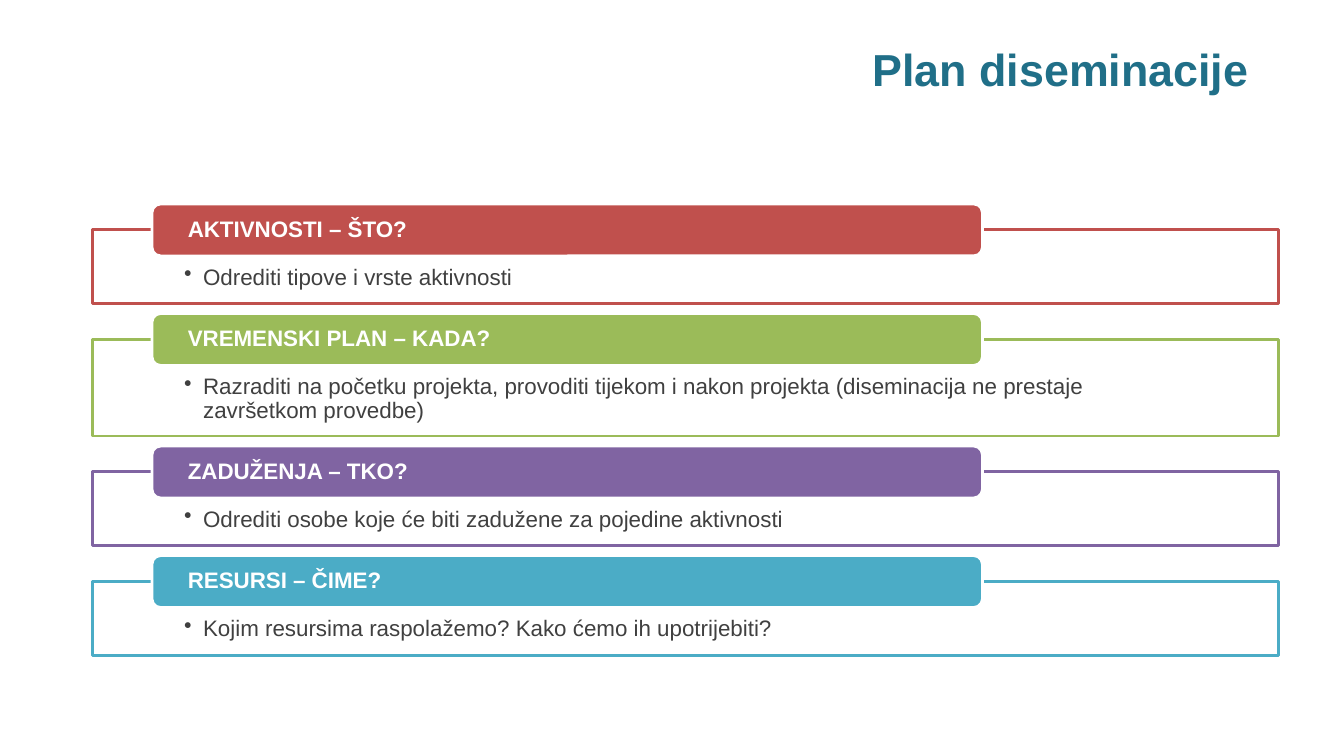
"""Build the dissemination plan slide: a title and four framed sections."""
from lxml import etree
from pptx import Presentation
from pptx import util as u
from pptx.dml.color import RGBColor
from pptx.enum import shapes, text
from pptx.oxml import ns

TITLE = "Plan diseminacije"
SECTIONS = [
    ("AKTIVNOSTI – ŠTO?", "Odrediti tipove i vrste aktivnosti", "red", 1),
    ("VREMENSKI PLAN – KADA?",
     "Razraditi na početku projekta, provoditi tijekom i nakon projekta "
     "(diseminacija ne prestaje završetkom provedbe)", "green", 2),
    ("ZADUŽENJA – TKO?",
     "Odrediti osobe koje će biti zadužene za pojedine aktivnosti", "purple", 1),
    ("RESURSI – ČIME?",
     "Kojim resursima raspolažemo? Kako ćemo ih upotrijebiti?", "blue", 1),
]
COLORS = {
    "title": "206F88", "body": "404040", "white": "FFFFFF",
    "red": "C0504D", "green": "9BBB59", "purple": "8064A2", "blue": "4BACC6",
}
FRAME = {"left": 2.33, "top": 5.79, "width": 29.9, "one_line": 1.86, "line": 0.58, "gap": 0.9}
HEADER = {"left": 3.83, "rise": 0.65, "width": 20.93, "height": 1.31}
FRAME_MARGINS = (2.31, 0.91, 2.31, 0.3)
HEADER_MARGINS = (0.84, 0, 0.84, 0)
TITLE_MARGINS = (0.25, 0.13, 0.25, 0.13)
BULLET_INDENT = 0.48


def color(name):
    return RGBColor.from_string(COLORS[name])


def set_attributes(target, values):
    for name, value in values.items():
        setattr(target, name, value)


def write_text(shape, words, size, color_name, bold, margins, anchor, bullet=False):
    frame = shape.text_frame
    sides = ("margin_left", "margin_top", "margin_right", "margin_bottom")
    set_attributes(frame, dict(zip(sides, map(u.Cm, margins))))
    set_attributes(frame, {"word_wrap": True, "auto_size": text.MSO_AUTO_SIZE.NONE,
                           "vertical_anchor": anchor})
    frame.text = words
    paragraph = frame.paragraphs[0]
    if bullet:
        properties = paragraph._p.get_or_add_pPr()
        properties.set("marL", str(u.Cm(BULLET_INDENT)))
        properties.set("indent", str(-u.Cm(BULLET_INDENT)))
        etree.SubElement(properties, ns.qn("a:buChar"), char="•")
    set_attributes(paragraph, {"alignment": text.PP_ALIGN.LEFT, "line_spacing": 0.9,
                               "space_before": u.Pt(0)})
    set_attributes(paragraph.font, {"name": "Arial", "size": u.Pt(size), "bold": bold})
    paragraph.font.color.rgb = color(color_name)


def add_box(slide, preset, box, fill, line):
    shape = slide.shapes.add_shape(preset, *map(u.Cm, box))
    shape.shadow.inherit = False
    shape.fill.solid()
    shape.fill.fore_color.rgb = color(fill)
    shape.line.color.rgb = color(line)
    shape.line.width = u.Pt(2)
    return shape


def main():
    presentation = Presentation()
    set_attributes(presentation, {"slide_width": u.Cm(33.87), "slide_height": u.Cm(19.05)})
    slide = presentation.slides.add_slide(presentation.slide_layouts[5])

    title = slide.shapes.title
    set_attributes(title, {"left": u.Cm(21.74), "top": u.Cm(0.95),
                           "width": u.Cm(10.21), "height": u.Cm(1.55)})
    write_text(title, TITLE, 32, "title", True, TITLE_MARGINS, text.MSO_ANCHOR.MIDDLE)
    title.text_frame.paragraphs[0].line_spacing = 1.0

    top = FRAME["top"]
    for heading, detail, accent, lines in SECTIONS:
        height = FRAME["one_line"] + (lines - 1) * FRAME["line"]
        frame = add_box(slide, shapes.MSO_SHAPE.RECTANGLE,
                        (FRAME["left"], top, FRAME["width"], height), "white", accent)
        write_text(frame, detail, 16, "body", False, FRAME_MARGINS,
                   text.MSO_ANCHOR.TOP, bullet=True)
        header = add_box(slide, shapes.MSO_SHAPE.ROUNDED_RECTANGLE,
                         (HEADER["left"], top - HEADER["rise"], HEADER["width"],
                          HEADER["height"]), accent, "white")
        write_text(header, heading, 16, "white", True, HEADER_MARGINS,
                   text.MSO_ANCHOR.MIDDLE)
        top += height + FRAME["gap"]

    presentation.save("out.pptx")


if __name__ == "__main__":
    main()
